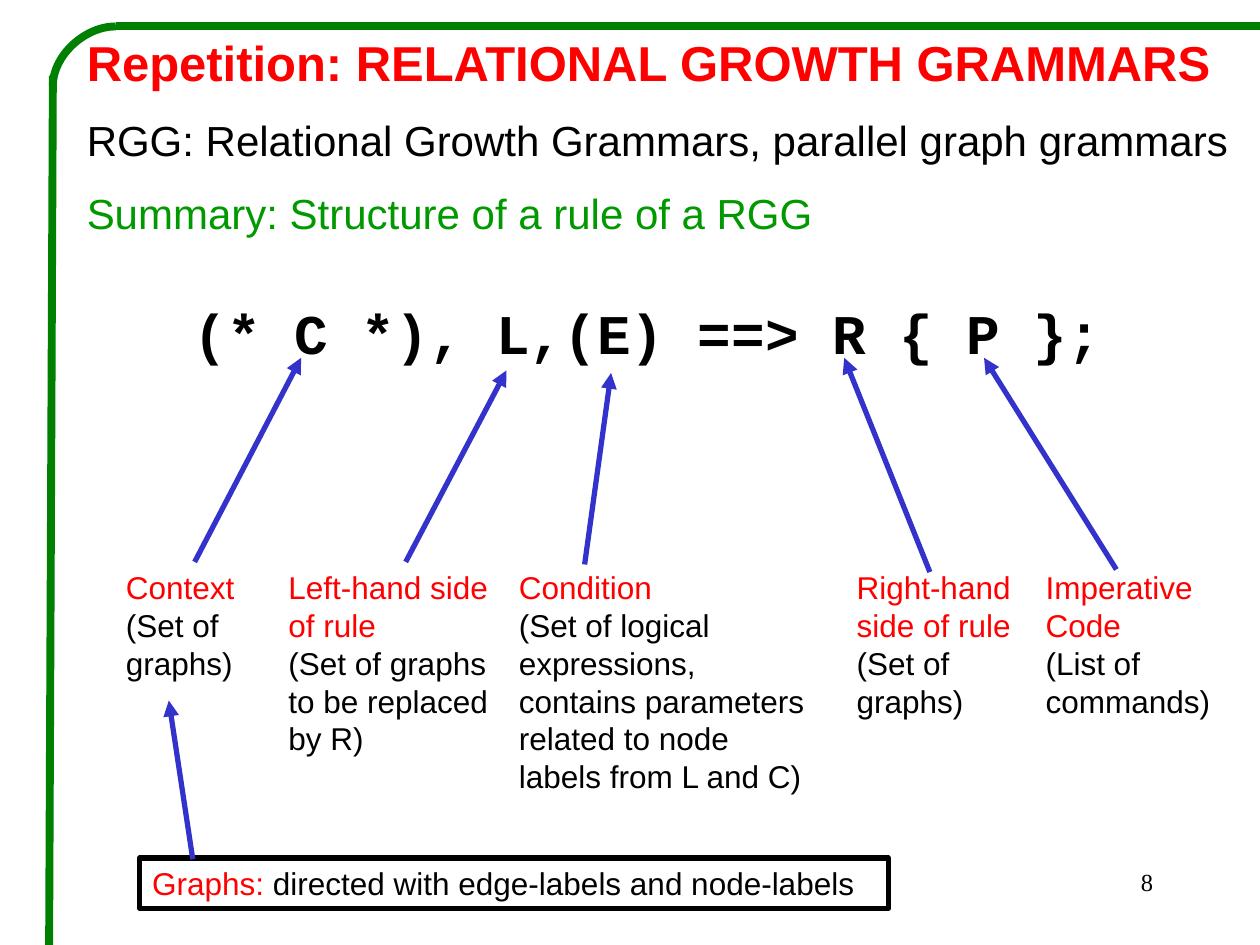
import pptx
import pptx.util
import pptx.dml.color
import pptx.enum.shapes
import pptx.enum.text
import pptx.oxml.ns
import lxml.etree

Inches = pptx.util.Inches
Pt = pptx.util.Pt
Link = pptx.enum.shapes.MSO_CONNECTOR
Align = pptx.enum.text.PP_ALIGN
qn = pptx.oxml.ns.qn
hues = {"red": "FF0000", "black": "000000", "green": "009900",
        "frame": "008000", "arrow": "3333CC", "white": "FFFFFF"}


def rgb(name):
    return pptx.dml.color.RGBColor.from_string(hues[name])


def write(box, paras, font="Arial", size=18, bold=False, gap=0, align=Align.LEFT):
    frame = box.text_frame
    frame.word_wrap = True
    frame.vertical_anchor = pptx.enum.text.MSO_ANCHOR.TOP
    for i, runs in enumerate(paras):
        para = frame.paragraphs[0] if i == 0 else frame.add_paragraph()
        para.alignment = align
        para.space_before = Pt(gap)
        for text, hue in runs:
            run = para.add_run()
            run.text = text
            run.font.name = font
            run.font.size = Pt(size)
            run.font.bold = bold
            run.font.color.rgb = rgb(hue)
    return frame


deck = pptx.Presentation()
deck.slide_width = Inches(10)
deck.slide_height = Inches(7.5)
slide = deck.slides.add_slide(deck.slide_layouts[6])
shapes = slide.shapes

head = shapes.add_textbox(Inches(0.59), Inches(0.21), Inches(9.29), Inches(1.78))
frame = write(head, [
    [("Repetition: RELATIONAL GROWTH GRAMMARS", "red")],
    [("RGG: Relational Growth Grammars, parallel graph grammars", "black")],
    [("Summary: Structure of a rule of a RGG", "green")],
], size=24, gap=13)
title = frame.paragraphs[0]
title.space_before = Pt(3)
title.runs[0].font.size = Pt(28)
title.runs[0].font.bold = True

mono = {"font": "Courier New", "size": 32, "bold": True, "gap": 7}
top = 4.46
boxes = [
    ("rule", 1.44, 2.32, 7.81, 0.64, [[("(* C *), L,(E) ==> R { P };", "black")]], mono),
    ("context", 0.9, top, 1.29, 1.01,
     [[("Context", "red")], [("(Set of graphs)", "black")]], {}),
    ("left", 2.19, top, 1.83, 1.62,
     [[("Left-hand side of rule", "red")], [("(Set of graphs", "black")],
      [("to be replaced by R)", "black")]], {}),
    ("test", 4.02, top, 2.56, 1.92,
     [[("Condition", "red")],
      [("(Set of logical expressions, contains parameters "
        "related to node labels from L and C)", "black")]], {}),
    ("right", 6.7, top, 1.44, 1.31,
     [[("Right-hand side of rule", "red")], [("(Set of graphs)", "black")]], {}),
    ("code", 8.2, top, 1.6, 1.31,
     [[("Imperative Code", "red")], [("(List of commands)", "black")]], {}),
    ("graphs", 1.11, 6.81, 5.94, 0.4,
     [[("Graphs: ", "red"), ("directed with edge-labels and node-labels", "black")]], {}),
]
parts = {}
for name, x, y, w, h, paras, style in boxes:
    box = shapes.add_shape(pptx.enum.shapes.MSO_SHAPE.RECTANGLE,
                           Inches(x), Inches(y), Inches(w), Inches(h))
    box.shadow.inherit = False
    box.fill.solid()
    box.fill.fore_color.rgb = rgb("white")
    box.line.fill.background()
    write(box, paras, **style)
    parts[name] = box
edge = parts["graphs"].line
edge.color.rgb = rgb("black")
edge.width = Pt(3)

lines = [
    (10, 0.21, 0.92, 0.21, "frame"),
    (0.42, 0.6, 0.39, 7.5, "frame"),
    (0.92, 0.21, 0.42, 0.68, "curve"),
    (1.55, top, 2.39, 2.84, "context"),
    (3.22, top, 4.02, 2.94, "arrow"),
    (4.64, 4.48, 4.85, 2.96, "arrow"),
    (7.38, 4.54, 6.7, 2.84, "arrow"),
    (8.86, 4.52, 7.81, 2.84, "arrow"),
    (1.53, 6.82, 1.34, 5.56, "arrow"),
]
for x1, y1, x2, y2, role in lines:
    border = role in ("frame", "curve")
    kind = Link.CURVE if role == "curve" else Link.STRAIGHT
    line = shapes.add_connector(kind, Inches(x1), Inches(y1), Inches(x2), Inches(y2))
    line.line.color.rgb = rgb("frame" if border else "arrow")
    line.line.width = Pt(4.5 if border else 3)
    props = line._element.spPr
    if role == "curve":
        props.find(qn("a:prstGeom")).set("prst", "curvedConnector2")
    if role == "context":
        line.begin_connect(parts["context"], 0)
    if not border:
        lxml.etree.SubElement(props.find(qn("a:ln")), qn("a:tailEnd"), type="triangle")
    lxml.etree.SubElement(props, qn("a:effectLst"))

page = shapes.add_textbox(Inches(7.17), Inches(6.83), Inches(2.08), Inches(0.5))
write(page, [[("8", "black")]], font="Times New Roman", size=14, align=Align.RIGHT)

deck.save("out.pptx")
